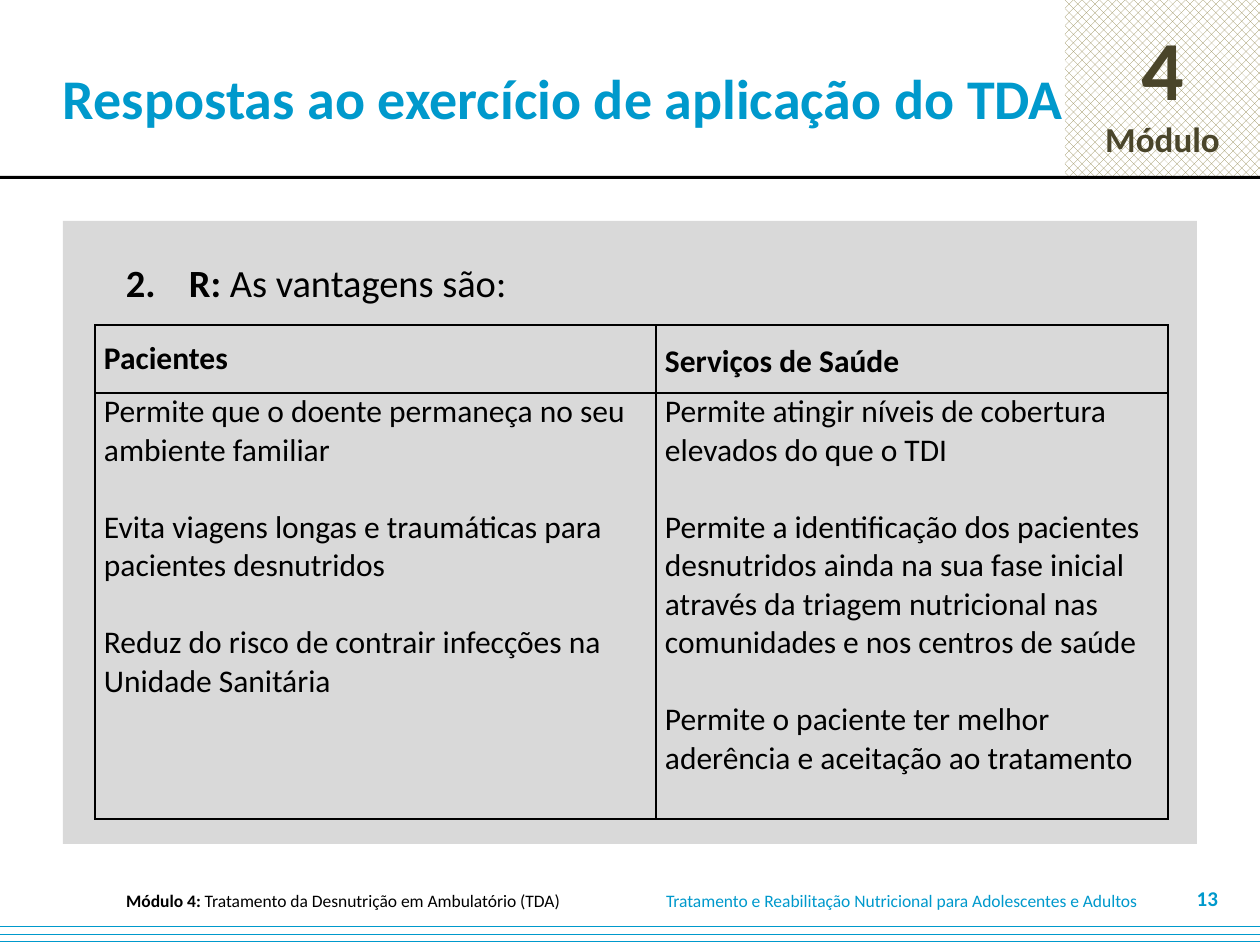
from dataclasses import dataclass

import pptx
import pptx.dml.color
import pptx.enum.dml
import pptx.enum.shapes
import pptx.enum.text
import pptx.oxml
import pptx.oxml.ns
import pptx.util

EMU_PER_PX = 914400 / 126
FONT = "Calibri"
COLORS = {
    "blue": "0099CC", "black": "000000", "white": "FFFFFF",
    "gray": "D9D9D9", "khaki": "948A54", "olive": "4A452A",
}
ALIGN = pptx.enum.text.PP_ALIGN
ANCHOR = pptx.enum.text.MSO_ANCHOR
PATTERN = pptx.enum.dml.MSO_PATTERN


@dataclass
class Span:
    text: str
    size: int
    color: str = "black"
    bold: bool = False


@dataclass
class Block:
    """A rectangle in px with paragraphs; margins run left, top, right, bottom."""
    left: int
    top: int
    width: int
    height: int
    lines: tuple[tuple[Span, ...], ...] = ()
    align: ALIGN = ALIGN.LEFT
    anchor: ANCHOR = ANCHOR.MIDDLE
    margins: tuple[int, int, int, int] = (13, 6, 13, 6)
    fill: str | None = None
    pattern: PATTERN | None = None


BLOCKS = (
    Block(1065, 0, 195, 176,
          ((Span("4", 48, "olive", True),), (Span("Módulo", 20, "olive", True),)),
          ALIGN.CENTER, fill="khaki", pattern=PATTERN.PERCENT_50),
    Block(-2, 176, 1262, 3, fill="black"),
    Block(0, 919, 1260, 26, fill="blue", pattern=PATTERN.DASHED_HORIZONTAL),
    Block(653, 888, 510, 25,
          ((Span("Tratamento e Reabilitação Nutricional para Adolescentes e Adultos",
                 10, "blue"),),)),
    Block(37, 888, 612, 25,
          ((Span("Módulo 4: ", 10, bold=True),
            Span("Tratamento da Desnutrição em Ambulatório (TDA)", 10)),), ALIGN.CENTER),
    Block(0, 0, 1081, 195,
          ((Span("Respostas ao exercício de aplicação do TDA", 32, "blue", True),),),
          margins=(63, 6, 13, 6)),
    Block(1168, 882, 63, 32, ((Span("13", 12, "blue", True),),), ALIGN.RIGHT),
)
ANSWER = Block(63, 221, 1134, 623,
               ((Span("R: ", 22, bold=True), Span("As vantagens são:", 22)),),
               anchor=ANCHOR.TOP, margins=(63, 38, 63, 6), fill="gray")

TABLE_LEFT, TABLE_TOP = 95, 325
COLUMN_WIDTHS = (561, 512)
ROW_HEIGHTS = (68, 426)
ADVANTAGES = {
    "Pacientes": (
        "Permite que o doente permaneça no seu ambiente familiar",
        "Evita viagens longas e traumáticas para pacientes desnutridos",
        "Reduz do risco de contrair infecções na Unidade Sanitária",
    ),
    "Serviços de Saúde": (
        "Permite atingir níveis de cobertura elevados do que o TDI",
        "Permite a identificação dos pacientes desnutridos ainda na sua fase inicial "
        "através da triagem nutricional nas comunidades e nos centros de saúde",
        "Permite o paciente ter melhor aderência e aceitação ao tratamento",
    ),
}


def px(length: int) -> pptx.util.Emu:
    return pptx.util.Emu(round(length * EMU_PER_PX))


def rgb(name: str) -> pptx.dml.color.RGBColor:
    return pptx.dml.color.RGBColor.from_string(COLORS[name])


def write_lines(frame, lines: tuple[tuple[Span, ...], ...], align: ALIGN = ALIGN.LEFT) -> None:
    frame.text = "\n".join("".join(span.text for span in line) for line in lines)
    for para, line in zip(frame.paragraphs, lines):
        para.alignment = align
        para.runs[0].text = line[0].text
        for span in line[1:]:
            para.add_run().text = span.text
        for run, span in zip(para.runs, line):
            run.font.name = FONT
            run.font.size = pptx.util.Pt(span.size)
            run.font.bold = span.bold
            run.font.color.rgb = rgb(span.color)


def draw_block(page, block: Block):
    bounds = [px(n) for n in (block.left, block.top, block.width, block.height)]
    if block.fill:
        box = page.shapes.add_shape(pptx.enum.shapes.MSO_SHAPE.RECTANGLE, *bounds)
        box.shadow.inherit = False
        box.line.fill.background()
        if block.pattern:
            box.fill.patterned()
            box.fill.pattern = block.pattern
            box.fill.fore_color.rgb = rgb(block.fill)
            box.fill.back_color.rgb = rgb("white")
        else:
            box.fill.solid()
            box.fill.fore_color.rgb = rgb(block.fill)
    else:
        box = page.shapes.add_textbox(*bounds)
    if block.lines:
        frame = box.text_frame
        frame.word_wrap = True
        frame.vertical_anchor = block.anchor
        (frame.margin_left, frame.margin_top,
         frame.margin_right, frame.margin_bottom) = map(px, block.margins)
        write_lines(frame, block.lines, block.align)
    return box


def number_paragraph(para, start: int, indent: int) -> None:
    para.space_after = pptx.util.Pt(10)
    properties = para._p.get_or_add_pPr()
    properties.set("marL", str(px(indent)))
    properties.set("indent", str(-px(indent)))
    properties.append(pptx.oxml.parse_xml(
        f'<a:buAutoNum {pptx.oxml.ns.nsdecls("a")} type="arabicPeriod" startAt="{start}"/>'))


def style_cell(cell) -> None:
    """Clear the fill, set the margins and put a thin black line on every side."""
    cell.fill.background()
    cell.margin_left = cell.margin_right = px(9)
    cell.margin_top = cell.margin_bottom = 0
    properties = cell._tc.get_or_add_tcPr()
    for position, side in enumerate("LRTB"):
        properties.insert(position, pptx.oxml.parse_xml(
            f'<a:ln{side} {pptx.oxml.ns.nsdecls("a")} w="{pptx.util.Pt(1)}"><a:solidFill>'
            f'<a:srgbClr val="{COLORS["black"]}"/></a:solidFill></a:ln{side}>'))


def draw_table(page) -> None:
    table = page.shapes.add_table(
        len(ROW_HEIGHTS), len(COLUMN_WIDTHS), px(TABLE_LEFT), px(TABLE_TOP),
        px(sum(COLUMN_WIDTHS)), px(sum(ROW_HEIGHTS))).table
    table.first_row = table.horz_banding = False
    for row, height in zip(table.rows, ROW_HEIGHTS):
        row.height = px(height)
    for index, (heading, points) in enumerate(ADVANTAGES.items()):
        table.columns[index].width = px(COLUMN_WIDTHS[index])
        header, body = table.cell(0, index), table.cell(1, index)
        style_cell(header)
        style_cell(body)
        header.vertical_anchor = ANCHOR.MIDDLE
        write_lines(header.text_frame, ((Span(heading, 18, bold=True),),))
        write_lines(body.text_frame, tuple((Span(point, 18),) for point in points))
        for para in body.text_frame.paragraphs[1:]:
            para.space_before = pptx.util.Pt(22)
    table.cell(0, 1).text_frame.paragraphs[0].line_spacing = 1.15


def main() -> None:
    deck = pptx.Presentation()
    deck.slide_width, deck.slide_height = px(1260), px(945)
    page = deck.slides.add_slide(deck.slide_layouts[6])
    for block in BLOCKS:
        draw_block(page, block)
    answer = draw_block(page, ANSWER)
    number_paragraph(answer.text_frame.paragraphs[0], start=2, indent=63)
    draw_table(page)
    deck.save("out.pptx")


if __name__ == "__main__":
    main()
